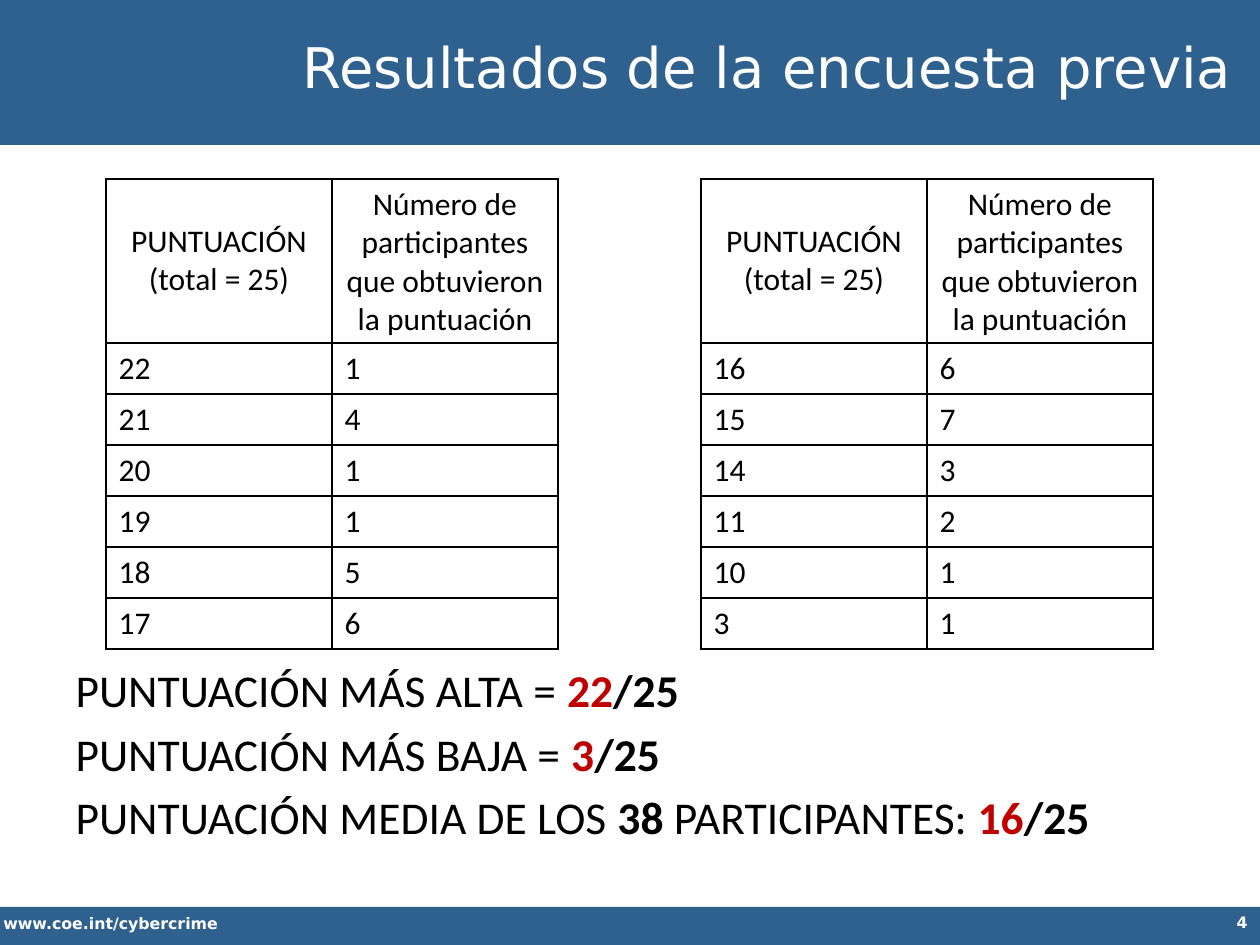
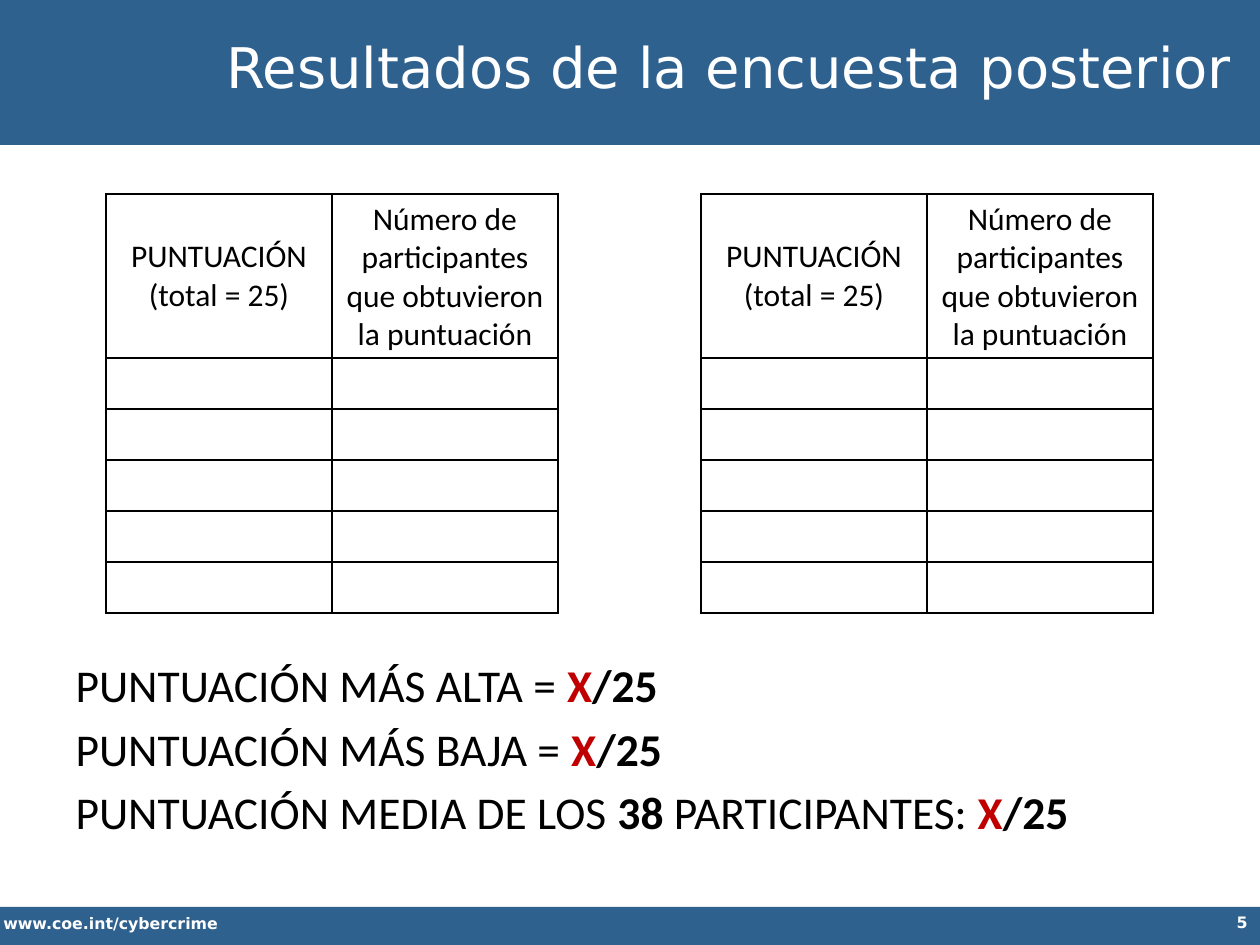
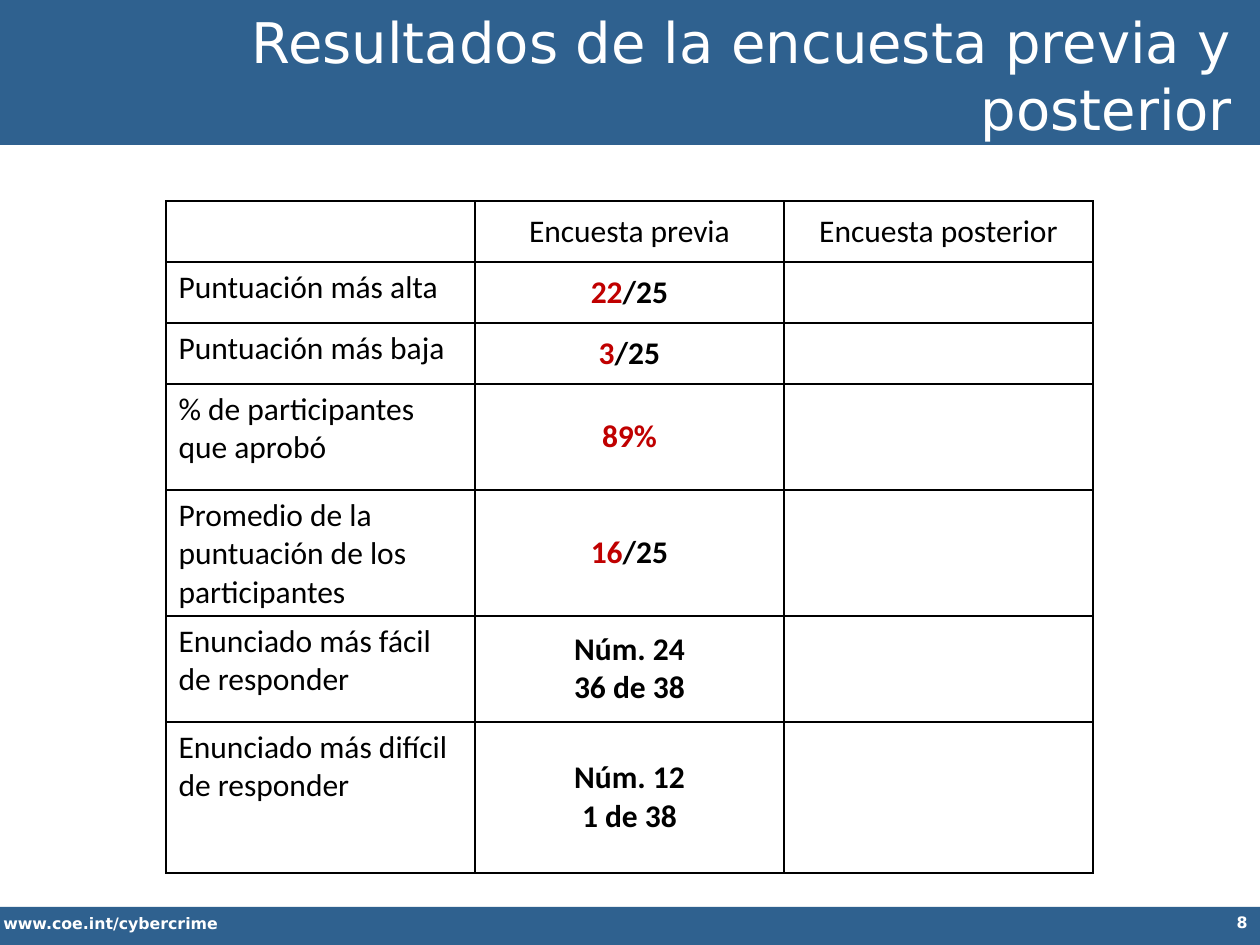
from dataclasses import dataclass

from lxml import etree
from pptx import Presentation
from pptx.dml.color import RGBColor
from pptx.enum.shapes import MSO_SHAPE
from pptx.enum.text import MSO_ANCHOR, MSO_AUTO_SIZE, PP_ALIGN
from pptx.oxml.ns import qn
from pptx.util import Pt

LEFT, CENTER, RIGHT = PP_ALIGN.LEFT, PP_ALIGN.CENTER, PP_ALIGN.RIGHT
TOP, MIDDLE = MSO_ANCHOR.TOP, MSO_ANCHOR.MIDDLE
RECT = MSO_SHAPE.RECTANGLE
NO_AUTOFIT = MSO_AUTO_SIZE.NONE

EMU_PER_INCH, PX_PER_INCH = 914400, 126
TITLE_AND_BODY, TITLE_ONLY = 1, 5


@dataclass(frozen=True)
class Theme:
    blue: str = "2F618F"
    white: str = "FFFFFF"
    black: str = "000000"
    red: str = "C00000"
    head_font: str = "DejaVu Sans"
    body_font: str = "Calibri"
    title_size: int = 32
    list_size: int = 26
    table_size: int = 18
    footer_size: int = 9
    list_gap: int = 5
    border: int = 1


THEME = Theme()


def px(n):
    return round(n * EMU_PER_INCH / PX_PER_INCH)


def box(*lengths):
    return [px(n) for n in lengths]


# Text: a paragraph is a list of (text, colour, bold) runs
def plain(text):
    return text, THEME.black, False


def bold(text):
    return text, THEME.black, True


def red(text):
    return text, THEME.red, True


def score(points):
    return [red(points), bold("/25")]


def add_runs(p, runs, size, font):
    for text, color, is_bold in runs:
        r = p.add_run()
        r.text = text
        r.font.size = Pt(size)
        r.font.name = font
        r.font.bold = is_bold
        r.font.color.rgb = RGBColor.from_string(color)


def paragraphs(tf, count):
    return [tf.paragraphs[0]] + [tf.add_paragraph() for _ in range(count - 1)]


# Shared slide parts
def add_band(slide, y, h):
    sp = slide.shapes.add_shape(RECT, *box(0, y, 1260, h))
    sp.shadow.inherit = False
    sp.fill.solid()
    sp.fill.fore_color.rgb = RGBColor.from_string(THEME.blue)
    sp.line.fill.background()
    slide.shapes._spTree.insert(2, sp._element)  # behind the placeholders


def add_footer_text(slide, text, x, y, w, h, align):
    tf = slide.shapes.add_textbox(*box(x, y, w, h)).text_frame
    tf.word_wrap = True
    p = tf.paragraphs[0]
    p.alignment = align
    add_runs(p, [(text, THEME.white, True)], THEME.footer_size, THEME.head_font)


def place(sp, area, anchor):
    sp.left, sp.top, sp.width, sp.height = box(*area)
    tf = sp.text_frame
    tf.word_wrap = True
    tf.auto_size = NO_AUTOFIT
    tf.vertical_anchor = anchor
    return tf


def new_slide(prs, layout, number, title, title_area):
    slide = prs.slides.add_slide(prs.slide_layouts[layout])
    add_band(slide, -4, 149)
    add_band(slide, 907, 40)
    add_footer_text(slide, "www.coe.int/cybercrime", -9, 908, 444, 32, LEFT)
    add_footer_text(slide, str(number), 977, 907, 283, 39, RIGHT)
    p = place(slide.shapes.title, title_area, MIDDLE).paragraphs[0]
    p.alignment = RIGHT
    add_runs(p, [(title, THEME.white, False)], THEME.title_size, THEME.head_font)
    return slide


# Summary list
def add_summary(slide, y, highest, lowest, average):
    lines = [
        [plain("PUNTUACIÓN MÁS ALTA = ")] + score(highest),
        [plain("PUNTUACIÓN MÁS BAJA = ")] + score(lowest),
        [plain("PUNTUACIÓN MEDIA DE LOS "), bold("38"),
         plain(" PARTICIPANTES: ")] + score(average),
    ]
    tf = place(slide.placeholders[1], (63, y, 1134, 242), TOP)
    for i, (p, runs) in enumerate(zip(paragraphs(tf, len(lines)), lines)):
        pPr = p._p.get_or_add_pPr()
        pPr.set("marL", str(px(71)))
        pPr.set("indent", str(-px(71)))
        etree.SubElement(pPr, qn("a:buNone"))
        p.space_before = Pt(THEME.list_gap if i else 0)
        add_runs(p, runs, THEME.list_size, THEME.body_font)


# Tables
def set_borders(cell):
    tcPr = cell._tc.get_or_add_tcPr()
    for side in ("a:lnL", "a:lnR", "a:lnT", "a:lnB"):
        ln = etree.SubElement(tcPr, qn(side), w=str(Pt(THEME.border)))
        fill = etree.SubElement(ln, qn("a:solidFill"))
        etree.SubElement(fill, qn("a:srgbClr"), val=THEME.black)


def fill_cell(cell, lines, centered):
    set_borders(cell)
    cell.fill.background()
    cell.vertical_anchor = MIDDLE if centered else TOP
    for p, runs in zip(paragraphs(cell.text_frame, len(lines)), lines):
        p.alignment = CENTER if centered else LEFT
        add_runs(p, runs, THEME.table_size, THEME.body_font)


def add_grid(slide, x, y, col_width, heights, rows, is_centered):
    cols = len(rows[0])
    frame = slide.shapes.add_table(
        len(rows), cols, *box(x, y, col_width * cols, sum(heights)))
    table = frame.table
    table.first_row = table.horz_banding = False
    for column in table.columns:
        column.width = px(col_width)
    for i, (height, row) in enumerate(zip(heights, rows)):
        table.rows[i].height = px(height)
        for j, lines in enumerate(row):
            fill_cell(table.cell(i, j), lines, is_centered(i, j))


def add_score_tables(slide, y, left, right):
    header = [
        [[plain("PUNTUACIÓN")], [plain("(total = 25)")]],
        [[plain("Número de participantes que obtuvieron la puntuación")]],
    ]
    for x, counts in ((106, left), (701, right)):
        rows = [header] + [[[[plain(v)]] if v else [] for v in pair]
                           for pair in counts]
        add_grid(slide, x, y, 226, [164] + [51] * len(counts), rows,
                 lambda i, j: i == 0)


def add_comparison(slide):
    results = [
        ("Puntuación más alta", [score("22")], 61),
        ("Puntuación más baja", [score("3")], 61),
        ("% de participantes que aprobó", [[red("89%")]], 106),
        ("Promedio de la puntuación de los participantes", [score("16")], 126),
        ("Enunciado más fácil de responder",
         [[bold("Núm. 24")], [bold("36 de 38")]], 106),
        ("Enunciado más difícil de responder",
         [[bold("Núm. 12")], [bold("1 de 38")]], 151),
    ]
    rows = [[[], [[plain("Encuesta previa")]], [[plain("Encuesta posterior")]]]]
    rows += [[[[plain(label)]], before, []] for label, before, _ in results]
    heights = [61] + [height for *_, height in results]
    add_grid(slide, 166, 201, 309, heights, rows, lambda i, j: j > 0)


def main():
    prs = Presentation()
    prs.slide_width, prs.slide_height = px(1260), px(945)
    one_line = (193, 26, 1052, 81)
    two_lines = (197, 0, 1048, 149)

    # Survey before the course
    slide = new_slide(prs, TITLE_AND_BODY, 4,
                      "Resultados de la encuesta previa", one_line)
    add_summary(slide, 656, "22", "3", "16")
    add_score_tables(
        slide, 179,
        [("22", "1"), ("21", "4"), ("20", "1"),
         ("19", "1"), ("18", "5"), ("17", "6")],
        [("16", "6"), ("15", "7"), ("14", "3"),
         ("11", "2"), ("10", "1"), ("3", "1")])

    # Survey after the course, still to be filled in
    slide = new_slide(prs, TITLE_AND_BODY, 5,
                      "Resultados de la encuesta posterior", one_line)
    add_summary(slide, 651, "X", "X", "X")
    blank = [("", "")] * 5
    add_score_tables(slide, 194, blank, blank)

    # Both surveys side by side
    slide = new_slide(prs, TITLE_ONLY, 8,
                      "Resultados de la encuesta previa y posterior", two_lines)
    add_comparison(slide)

    prs.save("out.pptx")


if __name__ == "__main__":
    main()
